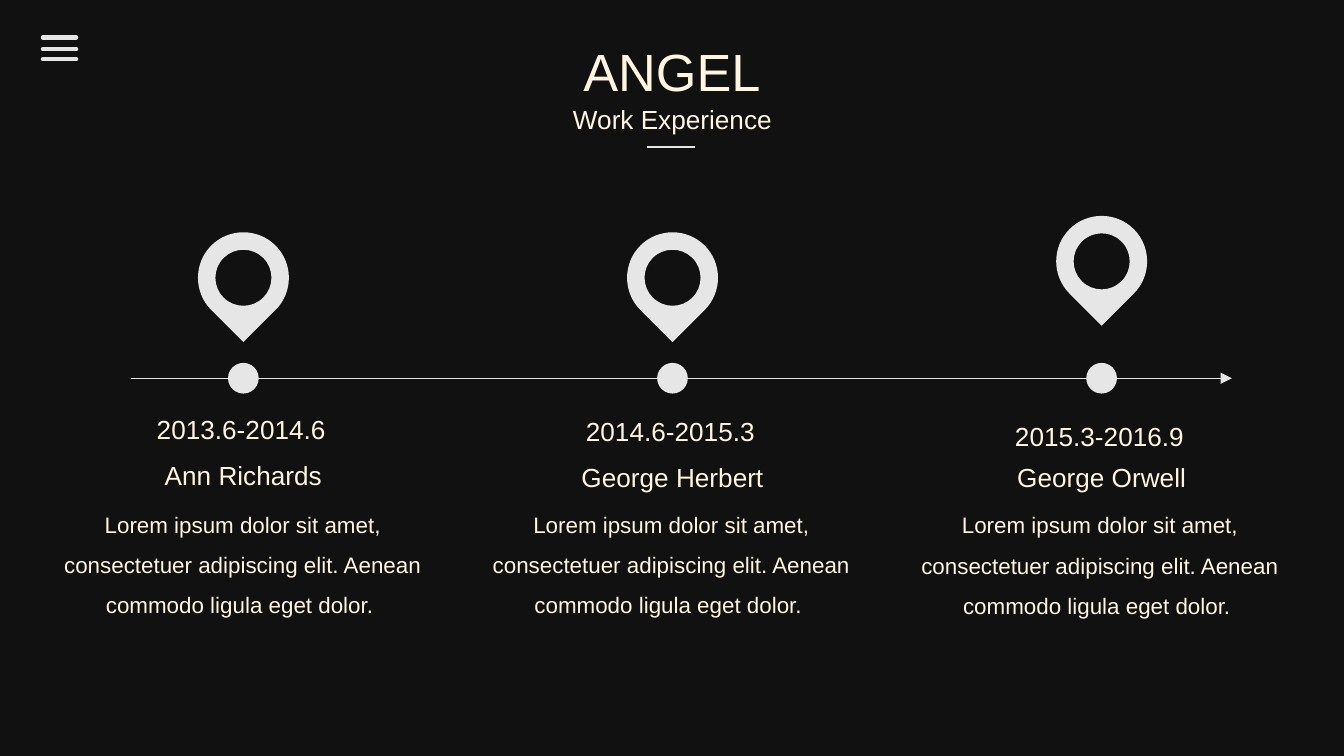
from pptx import Presentation
from pptx.dml.color import RGBColor
from pptx.enum.shapes import MSO_CONNECTOR, MSO_SHAPE
from pptx.enum.text import PP_ALIGN
from pptx.oxml.ns import qn
from pptx.oxml.xmlchemy import OxmlElement
from pptx.util import Cm, Pt

STRAIGHT = MSO_CONNECTOR.STRAIGHT
OVAL = MSO_SHAPE.OVAL
RECTANGLE = MSO_SHAPE.RECTANGLE
CENTER = PP_ALIGN.CENTER

COLORS = {"background": "111111", "mark": "E7E6E6", "text": "FFF5E1"}

deck = Presentation()
deck.slide_width, deck.slide_height = Cm(25.4), Cm(14.29)
page = deck.slides.add_slide(deck.slide_layouts[6])


def add_text(text, center, top, width, height, size, spacing=None):
    """Place centred text; center, top, width and height are in centimetres."""
    box = page.shapes.add_textbox(
        Cm(center - width / 2), Cm(top), Cm(width), Cm(height))
    box.text_frame.word_wrap = True
    para = box.text_frame.paragraphs[0]
    para.alignment = CENTER
    if spacing:
        para.line_spacing = spacing
    span = para.add_run()
    span.text = text
    span.font.color.rgb = RGBColor.from_string(COLORS["text"])
    for name, value in {"name": "Arial", "size": Pt(size)}.items():
        setattr(span.font, name, value)


def add_rule(left, right, y, width):
    """Draw a horizontal line and return its a:ln element."""
    rule = page.shapes.add_connector(STRAIGHT, Cm(left), Cm(y), Cm(right), Cm(y))
    rule.line.color.rgb = RGBColor.from_string(COLORS["mark"])
    rule.line.width = Pt(width)
    properties = rule._element.spPr
    properties.append(OxmlElement("a:effectLst"))
    return properties.find(qn("a:ln"))


backdrop = page.shapes.add_shape(RECTANGLE, 0, 0, deck.slide_width, deck.slide_height)
filled = [(backdrop, "background")]

# Heading
add_text("ANGEL", 12.7, 0.61, 3.89, 1.45, 28)
add_text("Work Experience", 12.71, 1.83, 4.5, 0.86, 14)
add_rule(12.23, 13.13, 2.78, 1.5)

# Menu icon
for y in (0.71, 0.93, 1.12):
    add_rule(0.81, 1.44, y, 2.25).set("cap", "rnd")

# Time axis
arrowhead = OxmlElement("a:tailEnd")
arrowhead.set("type", "triangle")
add_rule(2.48, 23.28, 7.15, 0.75).append(arrowhead)

# Unit circle as four Bezier quarters, three points each
BEND = 0.55
CIRCLE = []
for x, y in ((1, 0), (0, 1), (-1, 0), (0, -1)):
    CIRCLE += [(x - BEND * y, y + BEND * x), (BEND * x - y, x + BEND * y), (-y, x)]

# Three quarters of a circle and a corner, turned so the corner points down
PIN_RADIUS, HOLE_RADIUS, DOT_SIZE = 0.86, 0.53, 0.58
OUTLINE = [(PIN_RADIUS * x, PIN_RADIUS * y)
           for x, y in [(1, 0), *CIRCLE[:9], (1, -1)]]
HOLE = [(HOLE_RADIUS * x, -HOLE_RADIUS * y) for x, y in [(1, 0), *CIRCLE]]
CURVE_STARTS = (0, 3, 6, 10, 13, 16, 19)

# Date, name, name width, then pin centre and text tops
MILESTONES = [
    ("2013.6-2014.6", "Ann Richards", 3.51, 5.25, 7.68, 8.56, 9.28),
    ("2014.6-2015.3", "George Herbert", 4.01, 5.25, 7.72, 8.60, 9.28),
    ("2015.3-2016.9", "George Orwell", 3.76, 4.94, 7.82, 8.60, 9.29),
]
BODY = ("Lorem ipsum dolor sit amet, consectetuer adipiscing elit. "
        "Aenean commodo ligula eget dolor. ")

for column, milestone in enumerate(MILESTONES):
    date, name, name_width, pin_y, date_top, name_top, body_top = milestone
    center = 4.6 + 8.11 * column

    outline, hole = [[(Cm(center + x), Cm(pin_y + y)) for x, y in points]
                     for points in (OUTLINE, HOLE)]
    builder = page.shapes.build_freeform(*outline[0])
    builder.add_line_segments(outline[1:])
    builder.move_to(*hole[0])
    builder.add_line_segments(hole[1:])
    pin = builder.convert_to_shape()
    pin.rotation = 135

    # Join each three segments of a quarter into one curve
    segments = list(pin._element.iter(qn("a:lnTo")))
    for start in CURVE_STARTS:
        curve = OxmlElement("a:cubicBezTo")
        segments[start].addprevious(curve)
        for segment in segments[start:start + 3]:
            curve.append(segment[0])
            segment.getparent().remove(segment)

    dot = page.shapes.add_shape(OVAL, Cm(center - DOT_SIZE / 2), Cm(6.86),
                                Cm(DOT_SIZE), Cm(DOT_SIZE))
    filled += [(pin, "mark"), (dot, "mark")]

    add_text(date, 4.56 + 8.11 * column, date_top, 3.84, 0.86, 14)
    add_text(name, center, name_top, name_width, 0.86, 14)
    add_text(BODY, 4.59 + 8.1 * column, body_top, 7.49, 2.57, 12, 1.5)

for shape, color in filled:
    shape.shadow.inherit = False
    shape.fill.solid()
    shape.fill.fore_color.rgb = RGBColor.from_string(COLORS[color])
    shape.line.fill.background()

deck.save("out.pptx")
